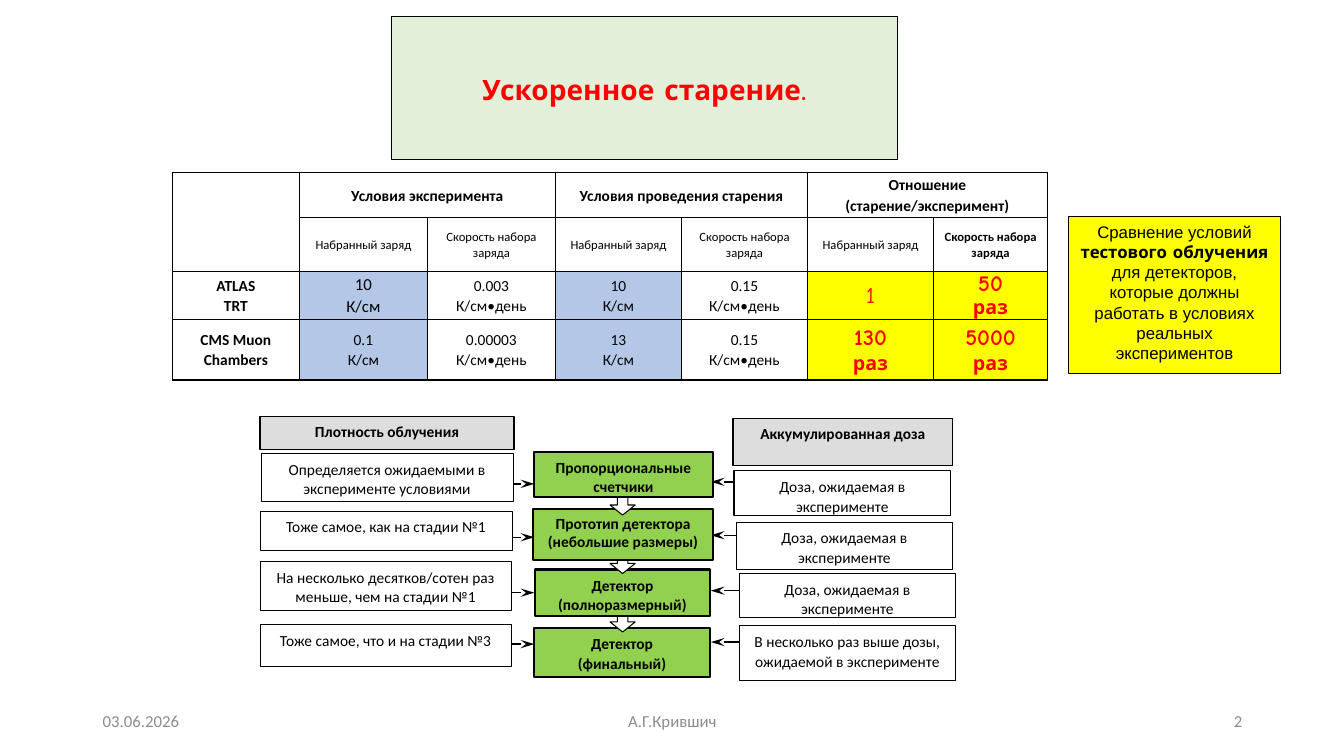
from lxml.etree import SubElement
from pptx import Presentation
from pptx.dml.color import RGBColor
from pptx.enum.shapes import MSO_CONNECTOR, MSO_SHAPE as Shape
from pptx.enum.text import MSO_ANCHOR as Anchor, MSO_AUTO_SIZE as AutoSize, PP_ALIGN as Align
from pptx.oxml.ns import qn
from pptx.util import Inches, Pt

W, H = 13.33, 7.5
BLACK, WHITE, RED, YELLOW = "000000", "FFFFFF", "FF0000", "FFFF00"
BLUE, GREEN, MINT, SILVER, GREY = "B4C7E7", "92D050", "E2F0D9", "DDDDDD", "8C8C8C"
BODY, ACCENT, SANS = "Calibri", "Comic Neue", "Arial"

COLUMNS = [1.26, 1.27, 1.27, 1.25, 1.25, 1.25, 1.13]
ROWS = [0.45, 0.53, 0.46, 0.6]
GROUPS = ["Условия эксперимента", "Условия проведения старения",
          "Отношение (старение/эксперимент)"]
MEASURES = ["Набранный заряд", "Скорость набора заряда"]
DETECTORS = [
    ["ATLAS\nTRT", "10\nК/см", "0.003\nК/см•день", "10\nК/см",
     "0.15\nК/см•день", "1", "50\nраз"],
    ["CMS Muon\nChambers", "0.1\nК/см", "0.00003\nК/см•день", "13\nК/см",
     "0.15\nК/см•день", "130\nраз", "5000\nраз"],
]

DOSE = "Доза, ожидаемая в эксперименте"
HEADINGS = [("Плотность облучения", (0, 0, 2.52, 0.33)),
            ("Аккумулированная доза", (4.69, 0.02, 2.18, 0.47))]
STAGES = [
    ("Пропорциональные счетчики", (2.72, 0.35, 1.77, 0.45),
     "Определяется ожидаемыми в эксперименте условиями", (0.01, 0.37, 2.5, 0.48),
     DOSE, (4.7, 0.54, 2.15, 0.44), 0.66),
    ("Прототип детектора (небольшие размеры)", (2.71, 0.92, 1.78, 0.51),
     "Тоже самое, как на стадии №1", (0, 0.94, 2.5, 0.39),
     DOSE, (4.72, 1.05, 2.15, 0.47), 1.19),
    ("Детектор (полноразмерный)", (2.73, 1.52, 1.73, 0.46),
     "На несколько десятков/сотен раз меньше, чем на стадии №1", (0, 1.44, 2.49, 0.49),
     DOSE, (4.75, 1.56, 2.15, 0.44), 1.74),
    ("Детектор\v(финальный)", (2.72, 2.1, 1.74, 0.49),
     "Тоже самое, что и на стадии №3", (0, 2.07, 2.49, 0.41),
     "В несколько раз выше дозы, ожидаемой в эксперименте", (4.75, 2.08, 2.15, 0.54), 2.25),
]


def rgb(value):
    """Turn a hex string into a colour."""
    return RGBColor.from_string(value)


def style(font, size, name=BODY, color=BLACK, bold=False):
    """Set the look of a font."""
    font.size, font.name, font.bold = Pt(size), name, bold
    font.color.rgb = rgb(color)


def write(tf, text, sizes, name=BODY, color=BLACK, bold=False, align=Align.CENTER, spacing=1.07):
    """Fill a text frame with one paragraph per line; the last size repeats."""
    tf.word_wrap = True
    for i, line in enumerate(text.split("\n")):
        p = tf.paragraphs[0] if i == 0 else tf.add_paragraph()
        p.text, p.alignment, p.line_spacing = line, align, spacing
        style(p.font, sizes[min(i, len(sizes) - 1)], name, color, bold)


def paint(sp, fill, width):
    """Give a shape a plain fill and a black outline."""
    sp.fill.solid()
    sp.fill.fore_color.rgb = rgb(fill)
    sp.line.color.rgb = rgb(BLACK)
    sp.line.width = Pt(width)


def place(s, kind, box, fill, width):
    """Add a flat preset shape with top-anchored text."""
    sp = s.shapes.add_shape(kind, *map(Inches, box))
    sp.shadow.inherit = False
    paint(sp, fill, width)
    sp.text_frame.vertical_anchor = Anchor.TOP
    return sp


def title(s, box):
    """Format the title placeholder as a framed banner."""
    sp = s.shapes.title
    sp.left, sp.top, sp.width, sp.height = map(Inches, box)
    paint(sp, MINT, 0.5)
    tf = sp.text_frame
    tf.auto_size, tf.vertical_anchor = AutoSize.NONE, Anchor.MIDDLE
    write(tf, "Ускоренное старение.", [20], ACCENT, RED, True)


def border(cell):
    """Draw thin black lines on all sides of a cell."""
    tcPr = cell._tc.get_or_add_tcPr()
    for side in ("lnL", "lnR", "lnT", "lnB"):
        ln = SubElement(tcPr, qn(f"a:{side}"), w=str(Pt(1)))
        SubElement(SubElement(ln, qn("a:solidFill")), qn("a:srgbClr"), val=BLACK)


def set_cell(cell, text, sizes, fill=WHITE, **look):
    """Fill one table cell."""
    cell.fill.solid()
    cell.fill.fore_color.rgb = rgb(fill)
    cell.vertical_anchor = Anchor.MIDDLE
    cell.margin_left = cell.margin_right = Inches(0.07)
    cell.margin_top = cell.margin_bottom = 0
    write(cell.text_frame, text, sizes, **look)


def conditions_table(s, box):
    """Build the table comparing experiment and ageing conditions."""
    table = s.shapes.add_table(len(ROWS), len(COLUMNS), *map(Inches, box)).table
    table.first_row = table.horz_banding = False
    for column, width in zip(table.columns, COLUMNS):
        column.width = Inches(width)
    for row, height in zip(table.rows, ROWS):
        row.height = Inches(height)
    for cell in table.iter_cells():
        border(cell)
    table.cell(0, 0).merge(table.cell(1, 0))
    set_cell(table.cell(0, 0), "", [11])
    for i, group in enumerate(GROUPS):
        c = 1 + 2 * i
        table.cell(0, c).merge(table.cell(0, c + 1))
        set_cell(table.cell(0, c), group, [11], bold=True)
        for j, measure in enumerate(MEASURES):
            set_cell(table.cell(1, c + j), measure, [9], bold=c + j == 6)
    for r, values in enumerate(DETECTORS, 2):
        for c, value in enumerate(values):
            cell = table.cell(r, c)
            if c > 4:
                set_cell(cell, value, [16, 14], YELLOW, name=ACCENT, color=RED,
                         bold=value != "1", spacing=1 if (r, c) == (2, 6) else 1.07)
            else:
                set_cell(cell, value, [12 if (r, c) == (2, 1) else 11],
                         BLUE if c in (1, 3) else WHITE, bold=c == 0)


def remark(s, box):
    """Add the yellow remark beside the table."""
    p = place(s, Shape.RECTANGLE, box, YELLOW, 0.5).text_frame.paragraphs[0]
    p.alignment = Align.CENTER
    for text, name in (("Сравнение условий ", SANS), ("тестового облучения ", ACCENT),
                       ("для детекторов, которые должны работать в условиях "
                        "реальных экспериментов", SANS)):
        r = p.add_run()
        r.text = text
        style(r.font, 12, name, bold=name == ACCENT)


def arrow(s, x1, x2, y):
    """Draw a level arrow from a side box to a stage."""
    line = s.shapes.add_connector(MSO_CONNECTOR.STRAIGHT, *map(Inches, (x1, y, x2, y)))
    line.line.color.rgb = rgb(BLACK)
    line.line.width = Pt(1)
    SubElement(line.line._get_or_add_ln(), qn("a:tailEnd"), type="stealth", w="med", len="lg")
    SubElement(line._element.spPr, qn("a:effectLst"))


def stages_diagram(s, left, top):
    """Draw the four test stages with their density and dose boxes."""
    def label(text, box, fill, width, bold):
        x, y, w, h = box
        sp = place(s, Shape.RECTANGLE, (left + x, top + y, w, h), fill, width)
        write(sp.text_frame, text, [11], bold=bold, spacing=1 if "Прототип" in text else 1.07)

    for text, box in HEADINGS:
        label(text, box, SILVER, 1, True)
    for i, (stage, box, density, density_box, dose, dose_box, y) in reversed(
            list(enumerate(STAGES))):
        arrow(s, left + 2.24, left + 2.72, top + y + 0.01)
        arrow(s, left + 4.95, left + 4.47, top + y - 0.01)
        label(density, density_box, WHITE, 0.75, False)
        label(dose, dose_box, WHITE, 0.75, False)
        if i < len(STAGES) - 1:
            down = place(s, Shape.DOWN_ARROW,
                         (left + 3.47, top + 0.54 + 0.58 * i, 0.25, 0.44), WHITE, 0.75)
            down.adjustments[0], down.adjustments[1] = 0.42, 0.4
        label(stage, box, GREEN, 1.5, True)


def footer(s, top, height):
    """Add the date, author and slide number."""
    for text, left, width, align in (("03.06.2026", 0.92, 3, Align.LEFT),
                                     ("А.Г.Крившич", 4.42, 4.5, Align.CENTER),
                                     ("2", 9.42, 3, Align.RIGHT)):
        tf = s.shapes.add_textbox(*map(Inches, (left, top, width, height))).text_frame
        tf.vertical_anchor = Anchor.MIDDLE
        write(tf, text, [12], color=GREY, align=align, spacing=1)


def main():
    """Build and save the slide."""
    prs = Presentation()
    prs.slide_width, prs.slide_height = Inches(W), Inches(H)
    s = prs.slides.add_slide(prs.slide_layouts[5])
    conditions_table(s, (1.71, 1.71, sum(COLUMNS), sum(ROWS)))
    remark(s, (10.6, 2.15, 2.1, 1.55))
    title(s, (3.88, 0.16, 5.02, 1.42))
    stages_diagram(s, 2.58, 4.13)
    footer(s, 6.95, 0.4)
    prs.save("out.pptx")


if __name__ == "__main__":
    main()
